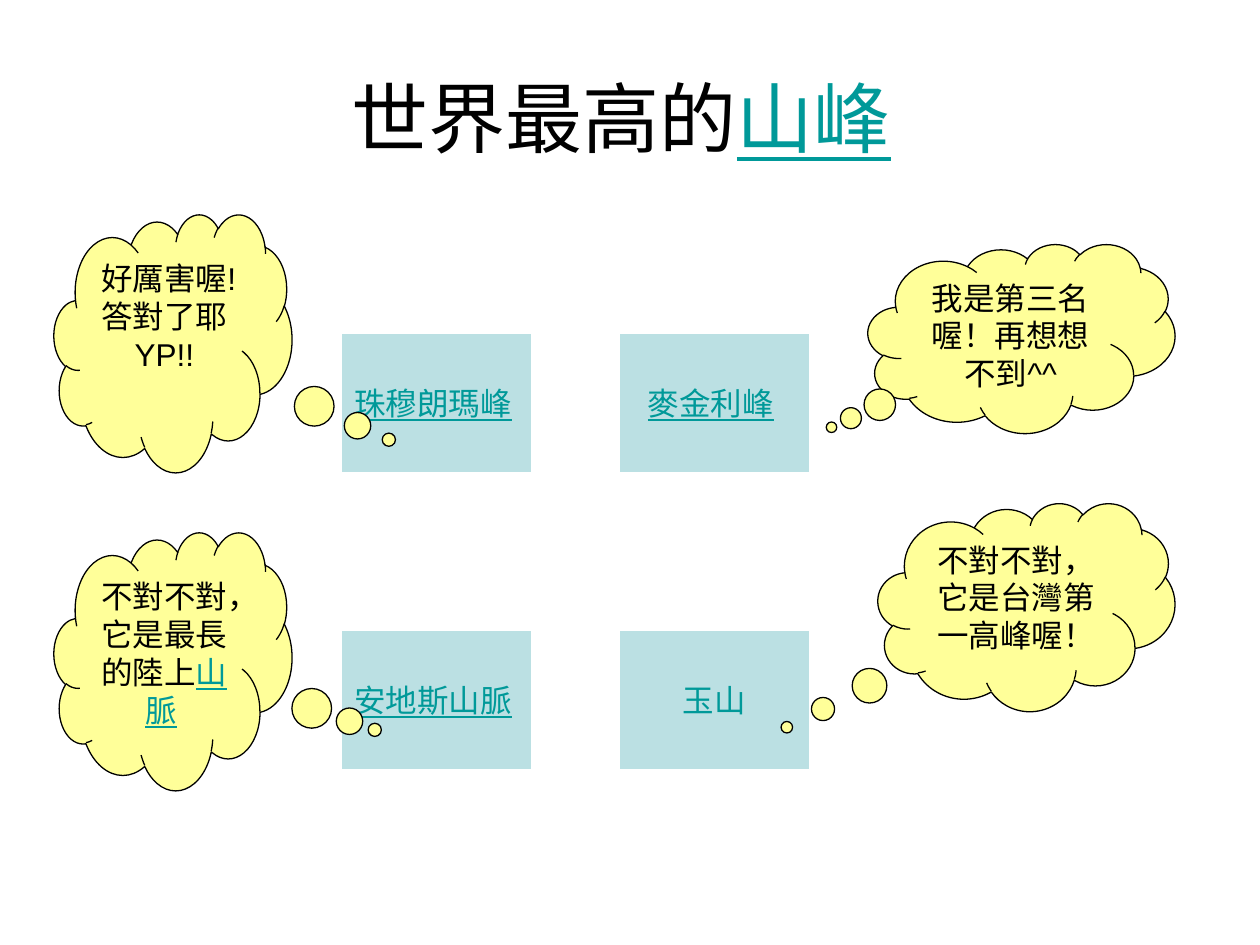
from pptx import Presentation
from pptx.dml.color import RGBColor
from pptx.enum.shapes import MSO_SHAPE as Preset
from pptx.enum.text import MSO_ANCHOR as Anchor, PP_ALIGN as Align
from pptx.util import Pt

PX = 914400 / 126
BLACK, TEAL, AQUA, YELLOW = "000000", "009999", "BBE0E3", "FFFF99"


def color(value):
    return RGBColor.from_string(value)


def write(shape, runs, size, anchor, wrap=True):
    frame = shape.text_frame
    frame.word_wrap = wrap
    frame.vertical_anchor = anchor
    para = frame.paragraphs[0]
    para.alignment = Align.CENTER
    for text, ink, underlined in runs:
        span = para.add_run()
        span.text = text
        span.font.name = "Arial"
        span.font.size = Pt(size)
        span.font.color.rgb = color(ink)
        span.font.underline = underlined


deck = Presentation()
deck.slide_width, deck.slide_height = round(1260 * PX), round(945 * PX)
page = deck.slides.add_slide(deck.slide_layouts[5])

title = page.shapes.title
title.left, title.top, title.width, title.height = [round(n * PX) for n in (63, 38, 1134, 157)]
write(title, [("世界最高的", BLACK, False), ("山峰", TEAL, True), (" ", BLACK, False)], 44, Anchor.MIDDLE)

answers = [
    ("珠穆朗瑪峰", True),
    ("麥金利峰", True),
    ("安地斯山脈", True),
    ("玉山", False),
]
for index, (name, linked) in enumerate(answers):
    row, column = divmod(index, 2)
    place = (342 + 278 * column, 334 + 297 * row, 189, 138)
    button = page.shapes.add_shape(Preset.ACTION_BUTTON_CUSTOM, *[round(n * PX) for n in place])
    button.shadow.inherit = False
    button.fill.solid()
    button.fill.fore_color.rgb = color(AQUA)
    button.line.fill.background()
    runs = [(name, TEAL, linked)]
    if linked:
        runs.append((" ", BLACK, False))
    write(button, runs, 18, Anchor.MIDDLE, wrap=False)

clouds = [
    ((878, 503, 297, 208), (-0.807, 0.578), [("不對不對，它是台灣第一高峰喔！", BLACK, False)]),
    ((868, 244, 307, 189), (-0.619, 0.47), [("我是第三名喔！再想想不到^^", BLACK, False)]),
    ((54, 214, 238, 258), (0.907, 0.375), [("好厲害喔!答對了耶YP!!", BLACK, False)]),
    ((54, 532, 238, 258), (0.848, 0.267), [
        ("不對不對，它是最長的陸上", BLACK, False),
        ("山脈", TEAL, True),
        (" ", BLACK, False),
    ]),
]
for place, tail, runs in clouds:
    cloud = page.shapes.add_shape(Preset.CLOUD_CALLOUT, *[round(n * PX) for n in place])
    cloud.shadow.inherit = False
    cloud.adjustments[0], cloud.adjustments[1] = tail
    cloud.fill.solid()
    cloud.fill.fore_color.rgb = color(YELLOW)
    cloud.line.color.rgb = color(BLACK)
    cloud.line.width = Pt(0.75)
    write(cloud, runs, 18, Anchor.TOP)

deck.save("out.pptx")
